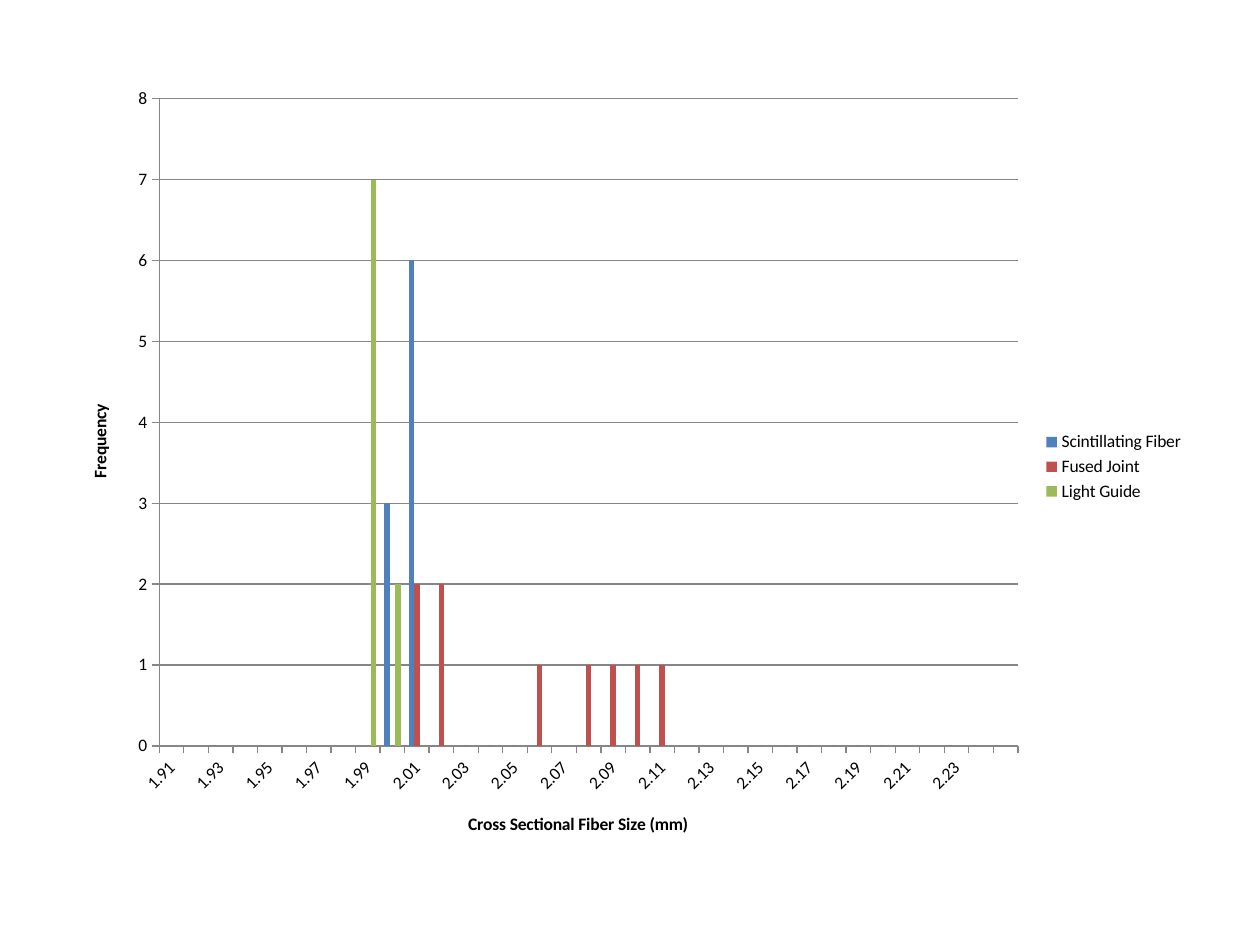
from pptx import Presentation
from pptx.chart.data import CategoryChartData
from pptx.dml.color import RGBColor
from pptx.enum.chart import XL_CHART_TYPE, XL_LEGEND_POSITION, XL_TICK_MARK
from pptx.util import Inches, Pt

CLUSTERED = XL_CHART_TYPE.COLUMN_CLUSTERED
LEGEND_RIGHT = XL_LEGEND_POSITION.RIGHT
TICK_OUTSIDE = XL_TICK_MARK.OUTSIDE
TICK_NONE = XL_TICK_MARK.NONE

BLACK = RGBColor(0x00, 0x00, 0x00)
GRAY = RGBColor(0x86, 0x86, 0x86)
BLUE = RGBColor(0x4F, 0x81, 0xBD)
RED = RGBColor(0xC0, 0x50, 0x4D)
GREEN = RGBColor(0x9B, 0xBB, 0x59)

FIBER_SIZES = [round(1.91 + 0.01 * step, 2) for step in range(34)]
FREQUENCIES = [
    ("Scintillating Fiber", BLUE, 35, {2.0: 3, 2.01: 6}),
    ("Fused Joint", RED, 34,
     {2.01: 2, 2.02: 2, 2.06: 1, 2.08: 1, 2.09: 1, 2.1: 1, 2.11: 1}),
    ("Light Guide", GREEN, 34, {1.99: 7, 2.0: 2}),
]


class HistogramSlide:
    """Holds the chart style and the slide being built."""

    font_name = "Calibri"
    font_size = Pt(10)
    line_width = Pt(0.75)

    def __init__(self, deck):
        self.width, self.height = deck.slide_width, deck.slide_height
        self.slide = deck.slides.add_slide(deck.slide_layouts[6])

    def style_font(self, font, bold=False):
        font.name, font.size, font.bold = self.font_name, self.font_size, bold
        font.color.rgb = BLACK

    def style_line(self, line):
        line.color.rgb = GRAY
        line.width = self.line_width

    def style_axis(self, axis, title):
        axis.major_tick_mark = TICK_OUTSIDE
        axis.minor_tick_mark = TICK_NONE
        self.style_line(axis.format.line)
        self.style_font(axis.tick_labels.font)
        heading = axis.axis_title.text_frame
        heading.text = title
        self.style_font(heading.paragraphs[0].runs[0].font, bold=True)

    def histogram(self, left, top, width, height, sizes, frequencies, size_title, count_title):
        data = CategoryChartData(number_format="General")
        data.categories = sizes
        for name, _, bins, counts in frequencies:
            values = [counts.get(size, 0) for size in sizes]
            data.add_series(name, values + [0] * (bins - len(sizes)))
        chart = self.slide.shapes.add_chart(
            CLUSTERED,
            int(left * self.width), int(top * self.height),
            int(width * self.width), int(height * self.height), data,
        ).chart
        self.style_font(chart.font)
        chart.has_title = False
        chart.has_legend = True
        chart.legend.position = LEGEND_RIGHT
        chart.legend.include_in_layout = False
        self.style_font(chart.legend.font)

        plot = chart.plots[0]
        plot.gap_width = 150
        plot.overlap = 0
        plot.vary_by_categories = False
        for series, (_, color, _, _) in zip(plot.series, frequencies):
            series.format.fill.solid()
            series.format.fill.fore_color.rgb = color

        self.style_axis(chart.category_axis, size_title)
        self.style_axis(chart.value_axis, count_title)
        chart.value_axis.minimum_scale = 0
        chart.value_axis.maximum_scale = 8
        chart.value_axis.major_unit = 1
        chart.value_axis.has_major_gridlines = True
        self.style_line(chart.value_axis.major_gridlines.format.line)


def main():
    deck = Presentation()
    deck.slide_width, deck.slide_height = Inches(10), Inches(7.5)
    HistogramSlide(deck).histogram(
        0.05, 0.58 / 7.5, 0.9, 6.25 / 7.5, FIBER_SIZES, FREQUENCIES,
        "Cross Sectional Fiber Size (mm)", "Frequency",
    )
    deck.save("out.pptx")


if __name__ == "__main__":
    main()
